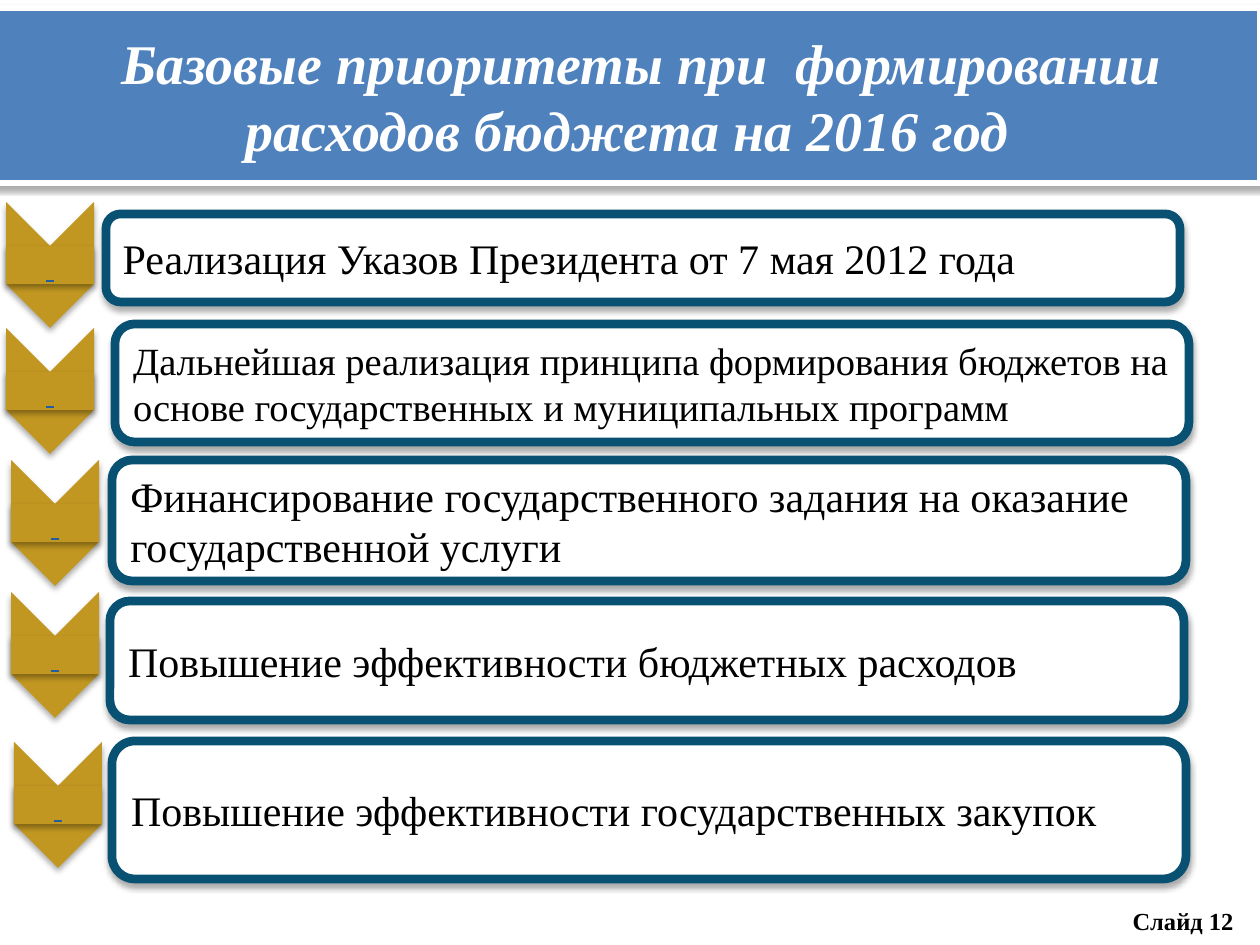
from dataclasses import dataclass

from lxml.etree import SubElement
from pptx import Presentation
from pptx.dml.color import RGBColor
from pptx.enum.shapes import MSO_SHAPE as Preset
from pptx.enum.text import MSO_ANCHOR as Anchor, PP_ALIGN as Align
from pptx.oxml.ns import qn
from pptx.util import Emu, Pt

EMU_PER_INCH = 914400
PX_PER_INCH = 126
FONT = "Times New Roman"

WHITE = RGBColor(0xFF, 0xFF, 0xFF)
BLACK = RGBColor(0, 0, 0)
BLUE = RGBColor(0x4F, 0x81, 0xBD)
TEAL = RGBColor(0x08, 0x51, 0x72)
GOLD = RGBColor(0xC1, 0x97, 0x21)
LINK_BLUE = RGBColor(0x1F, 0x5F, 0xA0)

BOX_WIDTH = 1074
ARROW_WIDTH, ARROW_HEIGHT = 88, 126
BAND_OFFSET, BAND_HEIGHT = 44, 38


@dataclass(frozen=True)
class Priority:
    text: str
    size: int
    left: int
    top: int
    height: int
    arrow_left: int
    arrow_top: int


PRIORITIES = [
    Priority("Реализация Указов Президента от 7 мая 2012 года",
             24, 106, 214, 88, 6, 202),
    Priority("Дальнейшая реализация принципа формирования бюджетов на "
             "основе государственных и муниципальных программ",
             22, 115, 324, 118, 6, 328),
    Priority("Финансирование государственного задания на оказание "
             "государственной услуги", 24, 112, 460, 121, 11, 460),
    Priority("Повышение эффективности бюджетных расходов",
             24, 110, 601, 119, 11, 592),
    Priority("Повышение эффективности государственных закупок",
             24, 112, 741, 138, 14, 742),
]


def px(length: int) -> Emu:
    return Emu(round(length * EMU_PER_INCH / PX_PER_INCH))


def add_shadow(shape) -> None:
    """Give the shape a soft black shadow falling straight down."""
    shape.shadow.inherit = False
    effects = shape._element.spPr.find(qn("a:effectLst"))
    shadow = SubElement(effects, qn("a:outerShdw"), blurRad=str(Pt(3.5)),
                        dist=str(Pt(2.2)), dir="5400000", rotWithShape="0")
    color = SubElement(shadow, qn("a:srgbClr"), val="000000")
    SubElement(color, qn("a:alpha"), val="32000")


def add_panel(shapes, preset: Preset, left: int, top: int, width: int,
              height: int, fill: RGBColor, line: RGBColor | None = None,
              line_width: int = 1):
    panel = shapes.add_shape(preset, px(left), px(top), px(width), px(height))
    panel.fill.solid()
    panel.fill.fore_color.rgb = fill
    if line is None:
        panel.line.fill.background()
    else:
        panel.line.color.rgb = line
        panel.line.width = Pt(line_width)
    add_shadow(panel)
    panel.text_frame.word_wrap = True
    panel.text_frame.vertical_anchor = Anchor.MIDDLE
    return panel


def add_span(para, text: str, size: int, color: RGBColor, align: Align,
             bold: bool = False, italic: bool = False,
             underline: bool = False) -> None:
    para.alignment = align
    span = para.add_run()
    span.text = text
    font = span.font
    font.name, font.size = FONT, Pt(size)
    font.bold, font.italic, font.underline = bold, italic, underline
    font.color.rgb = color


def add_title(page) -> None:
    banner = add_panel(page.shapes, Preset.RECTANGLE, -5, 8, 1265, 175,
                       BLUE, WHITE, 3)
    first = banner.text_frame.paragraphs[0]
    first._p.get_or_add_pPr().set("marL", str(px(28)))
    second = banner.text_frame.add_paragraph()
    for para, text in ((first, "Базовые приоритеты при  формировании"),
                       (second, "расходов бюджета на 2016 год")):
        add_span(para, text, 32, WHITE, Align.CENTER, bold=True, italic=True)


def add_arrow(page, left: int, top: int) -> None:
    """Draw a downward chevron crossed by a band with a short underline."""
    group = page.shapes.add_group_shape()
    shift = (ARROW_HEIGHT - ARROW_WIDTH) // 2
    chevron = add_panel(group.shapes, Preset.CHEVRON, left - shift,
                        top + shift, ARROW_HEIGHT, ARROW_WIDTH, GOLD)
    chevron.rotation = 90
    band = add_panel(group.shapes, Preset.RECTANGLE, left, top + BAND_OFFSET,
                     ARROW_WIDTH, BAND_HEIGHT, GOLD)
    add_span(band.text_frame.paragraphs[0], " ", 18, LINK_BLUE,
             Align.CENTER, underline=True)


def add_priority(page, item: Priority) -> None:
    box = add_panel(page.shapes, Preset.ROUNDED_RECTANGLE, item.left, item.top,
                    BOX_WIDTH, item.height, WHITE, TEAL, 5)
    add_span(box.text_frame.paragraphs[0], item.text, item.size, BLACK,
             Align.LEFT)
    add_arrow(page, item.arrow_left, item.arrow_top)


def add_page_number(page) -> None:
    box = page.shapes.add_textbox(px(1057), px(900), px(189), px(42))
    box.text_frame.word_wrap = True
    add_span(box.text_frame.paragraphs[0], "Слайд 12", 14, BLACK,
             Align.RIGHT, bold=True)


def main() -> None:
    deck = Presentation()
    deck.slide_width, deck.slide_height = px(1260), px(945)
    page = deck.slides.add_slide(deck.slide_layouts[6])
    add_title(page)
    for item in PRIORITIES:
        add_priority(page, item)
    add_page_number(page)
    deck.save("out.pptx")


if __name__ == "__main__":
    main()
